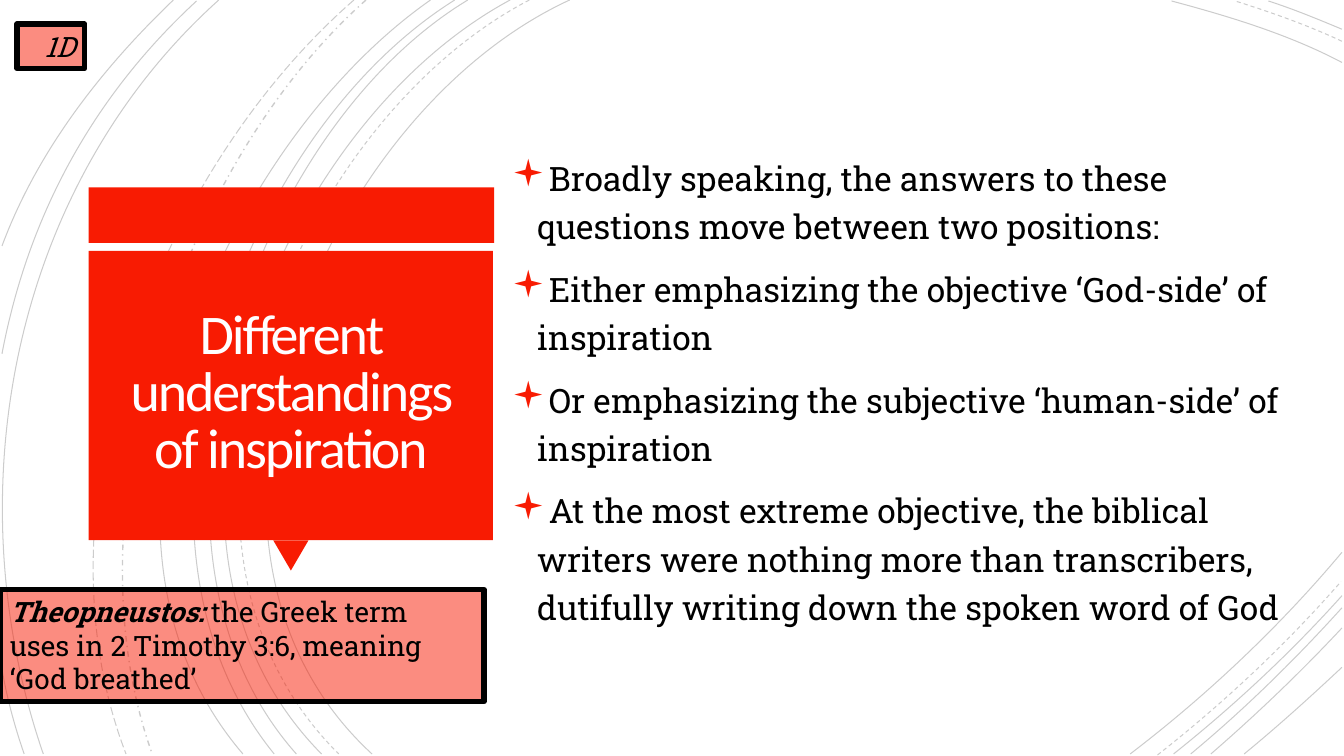
"""Build the slide on different understandings of inspiration."""
import dataclasses

import pptx
import pptx.dml.color
import pptx.enum.dml
import pptx.enum.shapes
import pptx.enum.text
import pptx.oxml
import pptx.oxml.ns
import pptx.util
from pptx.util import Inches


@dataclasses.dataclass(frozen=True)
class Theme:
    accent: str = "F81B02"
    ink: str = "000000"
    title_ink: str = "FFFEFF"
    title_font: str = "Calibri"
    body_font: str = "Roboto Slab"
    bullet_font: str = "Wingdings"
    title_size: int = 40
    body_size: int = 24
    note_size: int = 20


theme = Theme()
color = pptx.dml.color.RGBColor.from_string
qn = pptx.oxml.ns.qn
Align = pptx.enum.text.PP_ALIGN
Anchor = pptx.enum.text.MSO_ANCHOR
Dash = pptx.enum.dml.MSO_LINE
Shape = pptx.enum.shapes.MSO_SHAPE


def set_opacity(shape, percent):
    """Make the first solid colour of a shape translucent."""
    solid = shape.element.spPr.find(".//" + qn("a:srgbClr"))
    alpha = solid.makeelement(qn("a:alpha"), {"val": str(percent * 1000)})
    solid.append(alpha)


def add_text(box, paragraphs, size, font=theme.body_font, ink=theme.ink,
             align=Align.LEFT, anchor=Anchor.TOP, line_spacing=None,
             space_before=0, tracking=0, inset=None):
    """Fill a box with paragraphs, each a list of (text, bold, italic)."""
    frame = box.text_frame
    frame.word_wrap = True
    frame.vertical_anchor = anchor
    if inset is not None:
        frame.margin_left = frame.margin_right = Inches(inset)
        frame.margin_top = frame.margin_bottom = Inches(inset)
    for index, spans in enumerate(paragraphs):
        para = frame.add_paragraph() if index else frame.paragraphs[0]
        para.alignment = align
        para.line_spacing = line_spacing
        para.space_before = pptx.util.Pt(space_before)
        for text, bold, italic in spans:
            span = para.add_run()
            span.text = text
            span.font.name = font
            span.font.size = pptx.util.Pt(size)
            span.font.color.rgb = color(ink)
            span.font.bold = bold
            span.font.italic = italic
            if tracking:
                span.font._element.set("spc", str(int(tracking * 100)))


deck = pptx.Presentation()
deck.slide_width = Inches(13.33)
deck.slide_height = Inches(7.5)
page = deck.slides.add_slide(deck.slide_layouts[6])

arcs = [
    ((5.65, 0), (3.15, 1.15), (1.43, 5.4), (3.69, 7.48), Dash.SOLID),
    ((13.31, 0.62), (12.78, 0.34), (12.18, 0.16), (11.62, 0.01), Dash.SOLID),
    ((11.21, 7.48), (11.97, 6.9), (12.69, 6.22), (13.31, 5.48), Dash.SOLID),
    ((5.25, 0), (2.85, 1.25), (1.23, 5.37), (3.36, 7.48), Dash.DASH),
    ((13.31, 0.41), (12.97, 0.25), (12.6, 0.12), (12.25, 0.01), Dash.DASH),
    ((11.48, 7.49), (12.13, 6.98), (12.75, 6.4), (13.3, 5.77), Dash.DASH),
    ((5.06, 0), (2.7, 1.27), (1.1, 5.37), (3.19, 7.48), Dash.SOLID),
    ((13.31, 0.29), (13.07, 0.19), (12.83, 0.09), (12.58, 0.01), Dash.SOLID),
    ((11.64, 7.48), (12.23, 7.01), (12.8, 6.48), (13.31, 5.91), Dash.SOLID),
    ((4.64, 0), (2.44, 1.33), (1.1, 5.41), (2.94, 7.48), Dash.SOLID),
    ((11.81, 7.48), (12.34, 7.04), (12.84, 6.55), (13.31, 6.03), Dash.SOLID),
    ((4.51, 0), (2.31, 1.38), (0.97, 5.33), (2.72, 7.48), Dash.SOLID),
    ((12.01, 7.48), (12.46, 7.09), (12.9, 6.67), (13.31, 6.23), Dash.SOLID),
    ((4.27, 0), (2.17, 1.47), (0.53, 5.29), (2.41, 7.48), Dash.SOLID),
    ((12.34, 7.48), (12.67, 7.21), (12.99, 6.92), (13.31, 6.62), Dash.SOLID),
    ((3.63, 0), (1.76, 1.66), (0.65, 5.09), (1.51, 7.48), Dash.DASH_DOT),
    ((3.51, 0), (1.57, 1.69), (0.29, 4.99), (1.25, 7.48), Dash.LONG_DASH),
    ((2.17, 0), (0.11, 1.85), (-0.46, 4.9), (0.43, 7.48), Dash.SOLID),
    ((1.95, 0.01), (0.92, 0.96), (0.28, 2.14), (0.02, 3.51), Dash.SOLID),
    ((0.01, 6.58), (0.06, 6.89), (0.14, 7.19), (0.24, 7.48), Dash.SOLID),
    ((1.72, 0), (1, 0.69), (0.37, 1.5), (0.02, 2.44), Dash.SOLID),
]
for *controls, dash in arcs:
    points = [(Inches(x), Inches(y)) for x, y in controls]
    builder = page.shapes.build_freeform(*points[0])
    builder.add_line_segments(points[1:], close=False)
    arc = builder.convert_to_shape()
    outline = arc.element.spPr.find(".//" + qn("a:path"))
    curve = outline.makeelement(qn("a:cubicBezTo"), {})
    for segment in outline.findall(qn("a:lnTo")):
        curve.append(segment[0])
        outline.remove(segment)
    outline.append(curve)
    arc.shadow.inherit = False
    arc.fill.background()
    arc.line.color.rgb = color(theme.ink)
    arc.line.width = pptx.util.Pt(1 if dash == Dash.DASH_DOT else 0.75)
    arc.line.dash_style = dash
    set_opacity(arc, 20)

panels = [
    (Shape.RECTANGLE, 0.88, 1.86, 4.02, 0.55, 0),
    (Shape.ISOSCELES_TRIANGLE, 2.71, 5.36, 0.35, 0.3, 180),
    (Shape.RECTANGLE, 0.88, 2.49, 4.01, 2.87, 0),
]
for kind, left, top, width, height, rotation in panels:
    panel = page.shapes.add_shape(kind, Inches(left), Inches(top),
                                  Inches(width), Inches(height))
    panel.rotation = rotation
    panel.shadow.inherit = False
    panel.fill.solid()
    panel.fill.fore_color.rgb = color(theme.accent)
    panel.line.fill.background()

title = page.shapes.add_textbox(Inches(0.97), Inches(2.57), Inches(3.83), Inches(2.69))
add_text(title, [[("Different understandings of inspiration", False, False)]],
         theme.title_size, font=theme.title_font, ink=theme.title_ink,
         align=Align.CENTER, anchor=Anchor.MIDDLE, line_spacing=0.85,
         tracking=-1.5, inset=0.25)

positions = [
    "Broadly speaking, the answers to these questions move between two positions:",
    "Either emphasizing the objective ‘God-side’ of inspiration",
    "Or emphasizing the subjective ‘human-side’ of inspiration",
    "At the most extreme objective, the biblical writers were nothing more than "
    "transcribers, dutifully writing down the spoken word of God",
]
body = page.shapes.add_textbox(Inches(4.98), Inches(0.46), Inches(8), Inches(6.79))
add_text(body, [[(text, False, False)] for text in positions], theme.body_size,
         anchor=Anchor.MIDDLE, line_spacing=1.2, space_before=10)
namespace = pptx.oxml.ns.nsdecls("a")
bullet_parts = [
    f'<a:buClr {namespace}><a:srgbClr val="{theme.accent}"/></a:buClr>',
    f'<a:buSzPct {namespace} val="110000"/>',
    f'<a:buFont {namespace} typeface="{theme.bullet_font}" pitchFamily="2" charset="2"/>',
    f'<a:buChar {namespace} char="▪"/>',
]
for para in body.text_frame.paragraphs:
    properties = para._p.get_or_add_pPr()
    properties.set("marL", str(Inches(0.25)))
    properties.set("indent", str(Inches(-0.25)))
    for part in bullet_parts:
        properties.append(pptx.oxml.parse_xml(part))

notes = [
    ((0.17, 0.24, 0.67, 0.44), Align.RIGHT, [("1D", False, True)]),
    ((0, 5.85, 4.8, 1.11), Align.LEFT,
     [("Theopneustos: ", True, True),
      ("the Greek term uses in 2 Timothy 3:6, meaning ‘God breathed’", False, False)]),
]
for bounds, align, spans in notes:
    note = page.shapes.add_shape(Shape.RECTANGLE, *map(Inches, bounds))
    note.shadow.inherit = False
    note.fill.solid()
    note.fill.fore_color.rgb = color(theme.accent)
    set_opacity(note, 50)
    note.line.color.rgb = color(theme.ink)
    note.line.width = pptx.util.Pt(4)
    add_text(note, [spans], theme.note_size, align=align)
    note.text_frame.auto_size = pptx.enum.text.MSO_AUTO_SIZE.SHAPE_TO_FIT_TEXT

deck.save("out.pptx")
